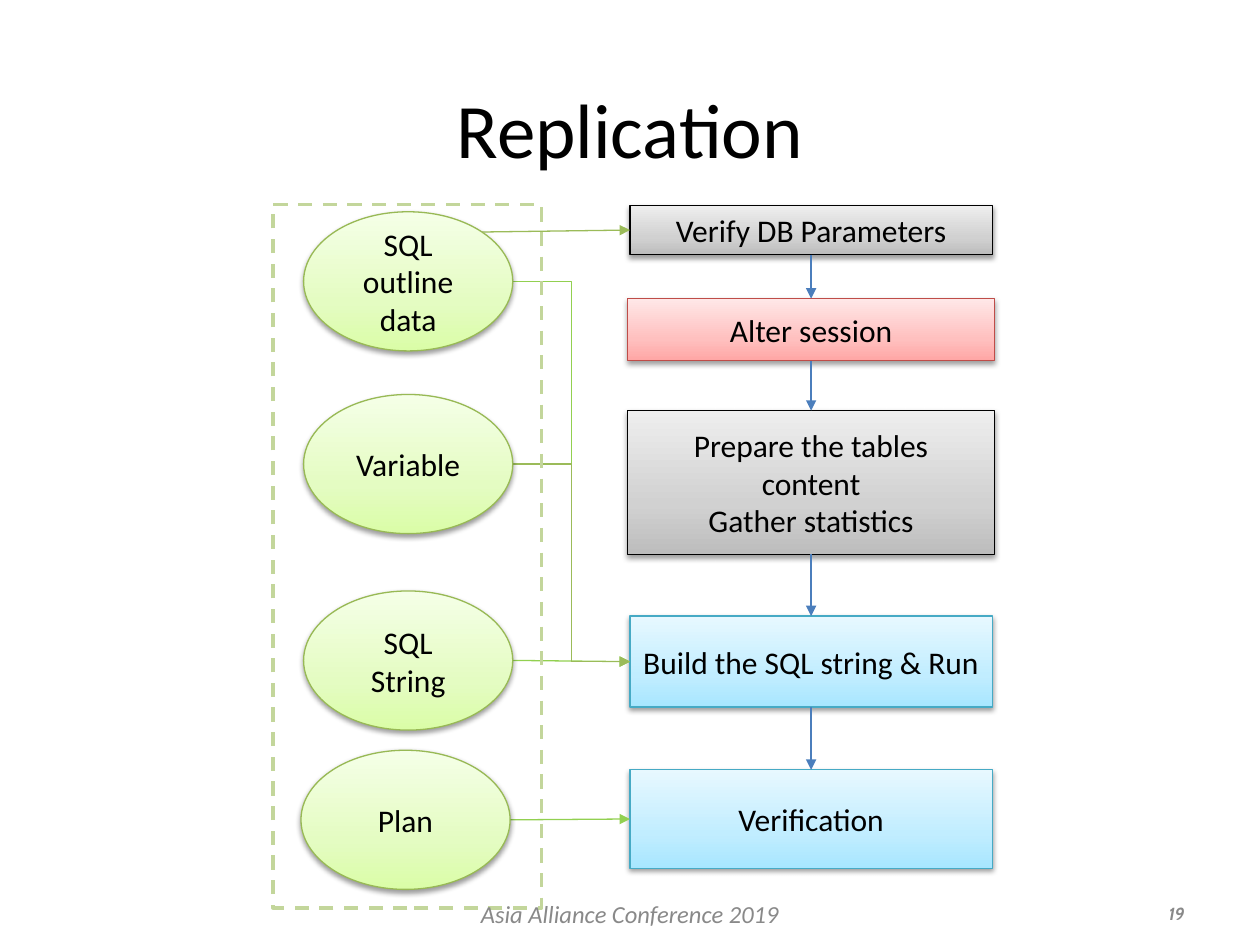
import pptx
import pptx.util
import pptx.dml.color
import pptx.enum.dml
import pptx.enum.shapes
import pptx.enum.text
import pptx.oxml
import pptx.oxml.ns

Pt = pptx.util.Pt
SHAPE = pptx.enum.shapes.MSO_SHAPE
CONN = pptx.enum.shapes.MSO_CONNECTOR
ALIGN = pptx.enum.text.PP_ALIGN
NS = pptx.oxml.ns.nsdecls("a")

COLORS = {"text": "000000", "muted": "898989", "flow": "4B7EBC", "lime": "92D050",
          "olive": "9BBB59", "frame": "C3D69B"}
# Bottom, middle and top of the gradient, then the outline
STYLES = {"gray": ("BDBDBD", "D1D1D1", "EEEEEE", "000000"),
          "red": ("FFA6A5", "FFC0BF", "FFE7E7", "BF4C48"),
          "blue": ("A7E6FF", "C1EDFF", "E7F8FF", "46AAC5"),
          "green": ("DAFDA7", "E4FCC2", "F5FFE7", "98B955")}
BODY = {"size": Pt(18), "name": "Calibri", "color": "text"}


def write(sp, text, fmt, align=ALIGN.CENTER):
    tf = sp.text_frame
    tf.word_wrap = True
    tf.vertical_anchor = pptx.enum.text.MSO_ANCHOR.MIDDLE
    tf.text = text
    for p in tf.paragraphs:
        p.alignment = align
        for key, value in fmt.items():
            if key == "color":
                p.font.color.rgb = pptx.dml.color.RGBColor.from_string(COLORS[value])
            else:
                setattr(p.font, key, value)


def node(s, kind, box, text, style):
    sp = s.shapes.add_shape(kind, *map(Pt, box))
    *stops, line = STYLES[style]
    sp.line.color.rgb = pptx.dml.color.RGBColor.from_string(line)
    sp.line.width = Pt(0.75)
    gs = "".join(f'<a:gs pos="{pos}"><a:srgbClr val="{c}"/></a:gs>'
                 for pos, c in zip((0, 35000, 100000), stops))
    spPr = sp.element.spPr
    spPr.find(pptx.oxml.ns.qn("a:ln")).addprevious(pptx.oxml.parse_xml(
        f'<a:gradFill {NS} rotWithShape="1"><a:gsLst>{gs}</a:gsLst>'
        '<a:lin ang="16200000" scaled="1"/></a:gradFill>'))
    spPr.append(pptx.oxml.parse_xml(
        f'<a:effectLst {NS}><a:outerShdw blurRad="39370" dist="20320" dir="5400000" '
        'rotWithShape="0"><a:srgbClr val="000000"><a:alpha val="38000"/></a:srgbClr>'
        '</a:outerShdw></a:effectLst>'))
    write(sp, text, BODY)
    return sp


prs = pptx.Presentation()
prs.slide_width, prs.slide_height = Pt(720), Pt(540)
s = prs.slides.add_slide(prs.slide_layouts[5])

# Title
title = s.shapes.title
title.left, title.top, title.width, title.height = Pt(36), Pt(28), Pt(648), Pt(90)
write(title, "Replication", {"size": Pt(44), "name": "Calibri", "color": "text"})

# Process steps, centred on one axis
AXIS = 463.5
steps = []
for top, width, height, text, style in [
        (117.4, 207, 28.1, "Verify DB Parameters", "gray"),
        (170.6, 209.6, 35.6, "Alter session", "red"),
        (234.7, 209.6, 82.1, "Prepare the tables\vcontent\nGather statistics", "gray"),
        (352.1, 207, 52, "Build the SQL string & Run", "blue"),
        (439.9, 207, 56.2, "Verification", "blue")]:
    steps.append(node(s, SHAPE.RECTANGLE, (AXIS - width / 2, top, width, height), text, style))
verify, alter, prepare, build, verification = steps

# Arrows: start point, joined step and its side, colour, joined start step
ELLIPSE_W, ELLIPSE_H, INPUT_X = 119.5, 79.5, 173.5
INPUT_RIGHT = INPUT_X + ELLIPSE_W
arrows = [(CONN.STRAIGHT, 0, 0, below, 0, "flow", above)
          for above, below in zip(steps, steps[1:])]
arrows += [(CONN.STRAIGHT, INPUT_RIGHT - 1.5, 468.5, verification, 1, "lime", None),
           (CONN.STRAIGHT, INPUT_RIGHT, 377.4, build, 1, "lime", None),
           (CONN.ELBOW, INPUT_RIGHT, 160.7, build, 1, "lime", None),
           (CONN.ELBOW, INPUT_RIGHT, 265.1, build, 1, "olive", None),
           (CONN.STRAIGHT, 275.5, 132.6, verify, 1, "olive", None)]
for kind, x, y, target, side, color, source in arrows:
    c = s.shapes.add_connector(kind, Pt(x), Pt(y), target.left,
                               target.top + target.height // 2)
    if source is not None:
        c.begin_connect(source, 2)
    if kind == CONN.STRAIGHT:
        c.end_connect(target, side)
    c.line.color.rgb = pptx.dml.color.RGBColor.from_string(COLORS[color])
    c.line.width = Pt(0.75)
    c.line._get_or_add_ln().append(pptx.oxml.parse_xml(f'<a:tailEnd {NS} type="triangle"/>'))
    c.element.spPr.append(pptx.oxml.parse_xml(f'<a:effectLst {NS}/>'))

# Dashed frame around the inputs
frame = s.shapes.add_shape(SHAPE.RECTANGLE, Pt(156), Pt(116.8), Pt(153.5), Pt(402))
frame.shadow.inherit = False
frame.fill.background()
frame.line.color.rgb = pptx.dml.color.RGBColor.from_string(COLORS["frame"])
frame.line.width = Pt(2)
frame.line.dash_style = pptx.enum.dml.MSO_LINE.DASH

# Inputs
for left, top, text in [(INPUT_X, 121, "SQL outline data"), (INPUT_X - 1.5, 428.7, "Plan"),
                        (INPUT_X, 225.4, "Variable"), (INPUT_X, 337.7, "SQL String")]:
    node(s, SHAPE.OVAL, (left, top, ELLIPSE_W, ELLIPSE_H), text, "green")

# Footer and page number
for left, width, text, align, fmt in [
        (246, 228, "Asia Alliance Conference 2019", ALIGN.CENTER,
         {"size": Pt(14), "name": "Calibri", "italic": True, "color": "muted"}),
        (516, 168, "19", ALIGN.RIGHT,
         {"size": Pt(10), "name": "Cabin", "bold": True, "italic": True, "color": "muted"})]:
    write(s.shapes.add_textbox(Pt(left), Pt(507.5), Pt(width), Pt(28.75)), text, fmt, align)

prs.save("out.pptx")
